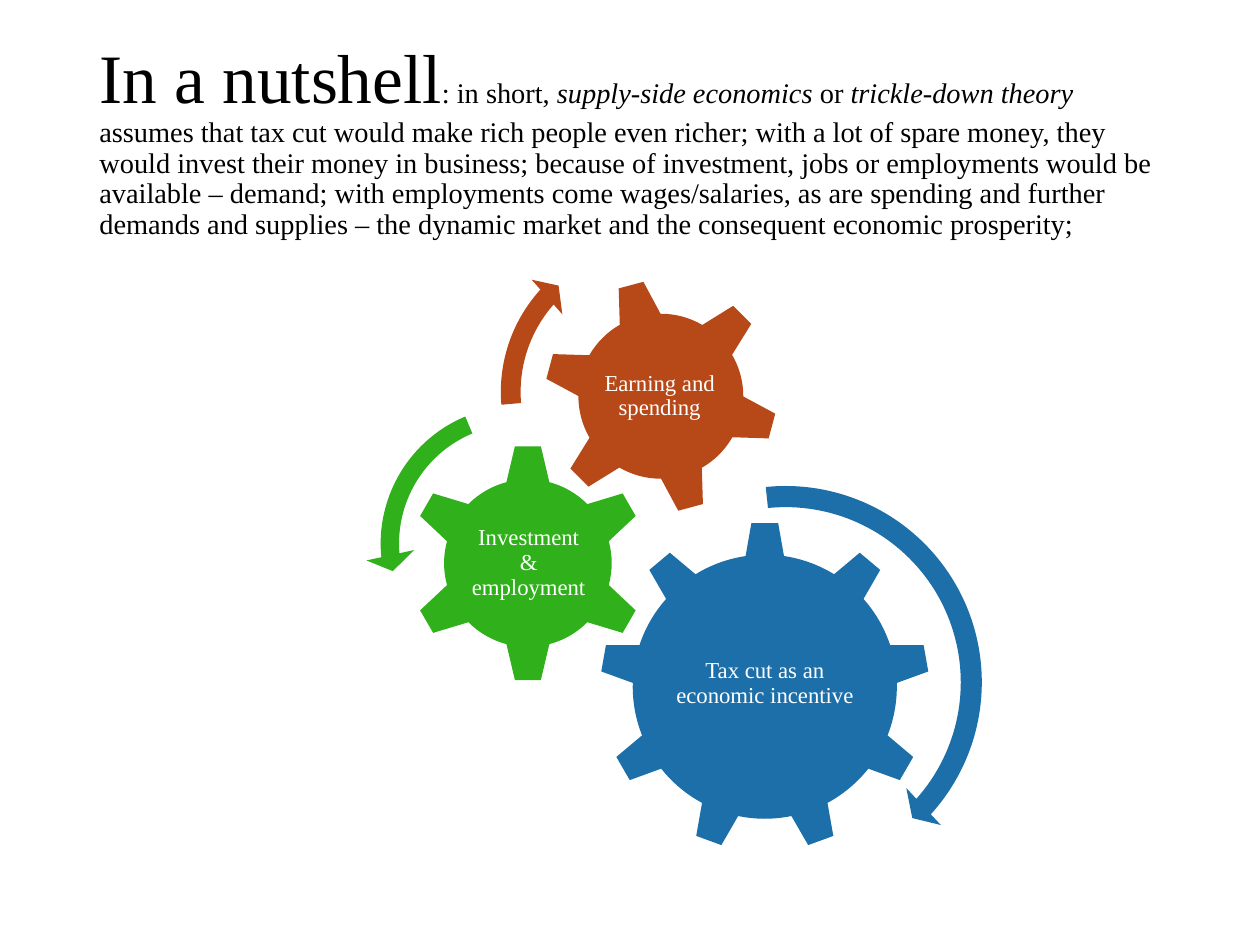
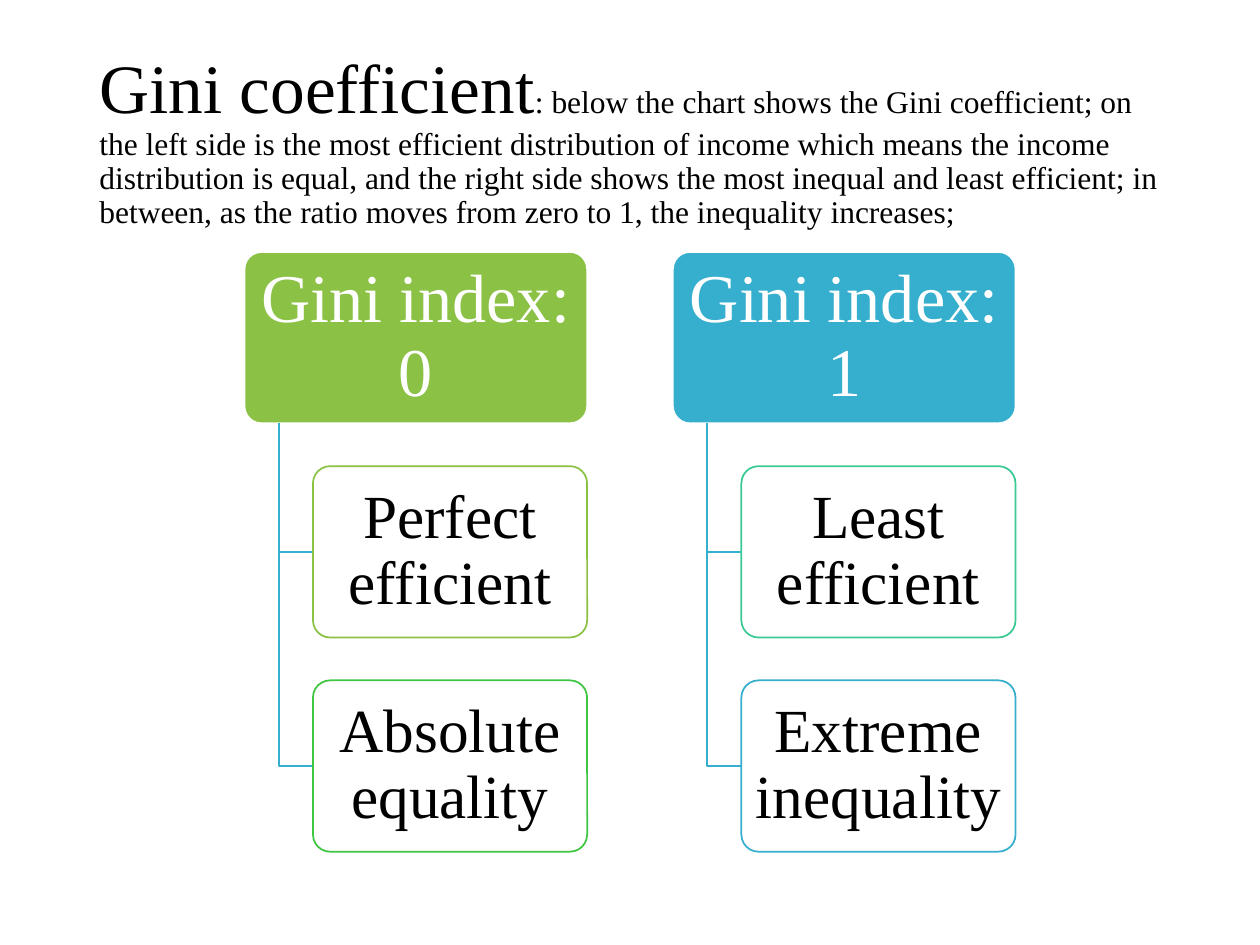
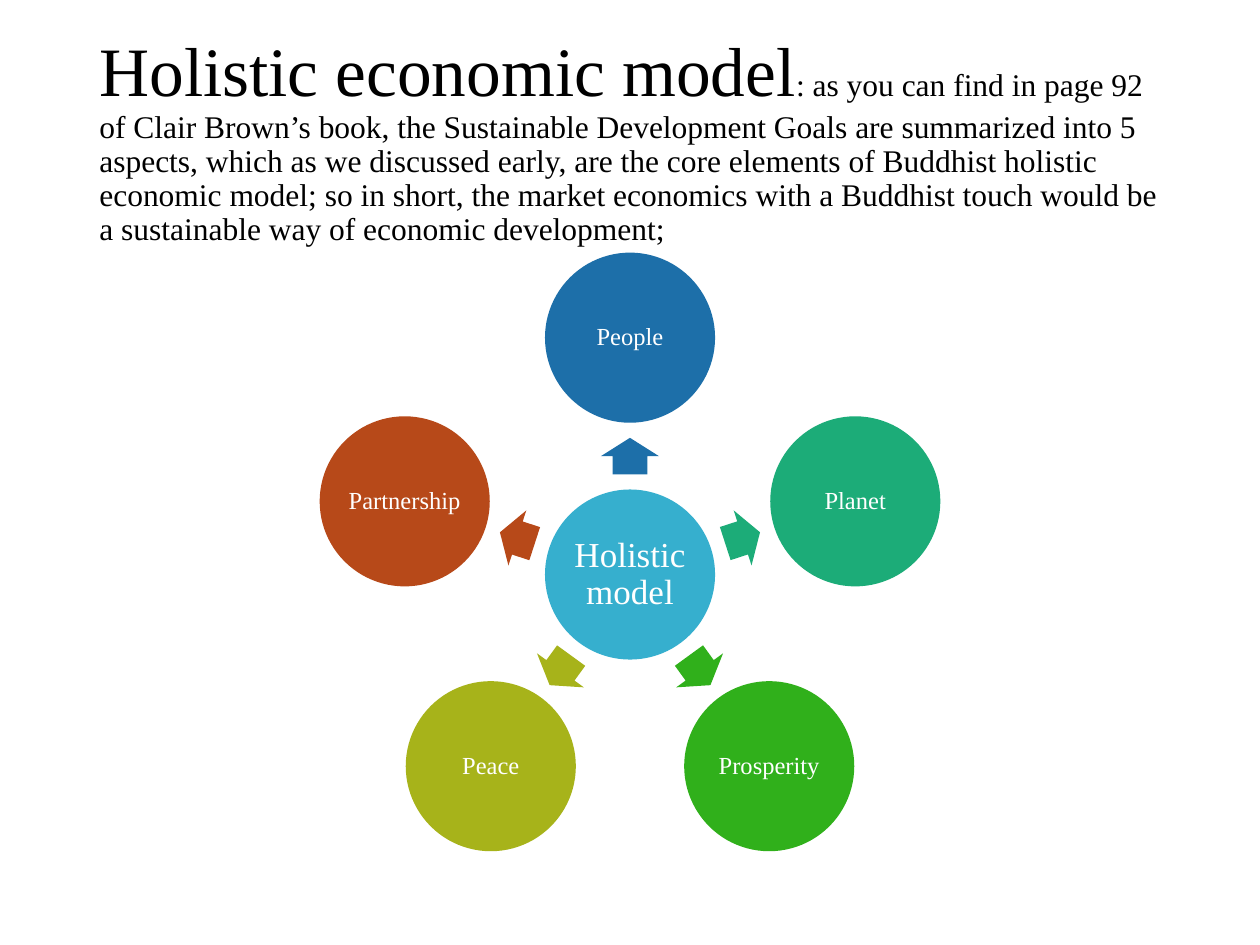
from math import cos, radians, sin

from lxml.etree import SubElement
from pptx import Presentation
from pptx.dml.color import RGBColor
from pptx.enum.shapes import MSO_SHAPE
from pptx.enum.text import MSO_ANCHOR, PP_ALIGN
from pptx.oxml.ns import qn
from pptx.util import Inches, Pt

FONT = "Times New Roman"
BLACK = RGBColor(0x00, 0x00, 0x00)
WHITE = RGBColor(0xFF, 0xFF, 0xFF)
BLUE = RGBColor(0x1D, 0x6F, 0xA9)
GREEN = RGBColor(0x30, 0xB0, 0x1B)
RUST = RGBColor(0xB7, 0x49, 0x19)
TEAL = RGBColor(0x1C, 0xAC, 0x78)
OLIVE = RGBColor(0xA7, 0xB3, 0x1A)
SKY = RGBColor(0x36, 0xAF, 0xCE)
LIME = RGBColor(0x8B, 0xC1, 0x45)
LEAF_GREEN = RGBColor(0x40, 0xC5, 0x43)
MINT = RGBColor(0x3B, 0xCA, 0x93)

HEADING_BOX = (0.69, 0.4, 8.62, 1.45)
HEADING_SIZE = 39.6

NUTSHELL = ("In a nutshell", 16.2, [
    (": in short, ", False),
    ("supply-side economics", True),
    (" or ", False),
    ("trickle-down theory", True),
    (" assumes that tax cut would make rich people even richer; with a lot of "
     "spare money, they would invest their money in business; because of "
     "investment, jobs or employments would be available – demand; with "
     "employments come wages/salaries, as are spending and further demands and "
     "supplies – the dynamic market and the consequent economic prosperity;", False),
])
GINI = ("Gini coefficient", 18, [
    (": below the chart shows the Gini coefficient; on the left side is the most "
     "efficient distribution of income which means the income distribution is "
     "equal, and the right side shows the most inequal and least efficient; in "
     "between, as the ratio moves from zero to 1, the inequality increases;", False),
])
HOLISTIC = ("Holistic economic model", 18, [
    (": as you can find in page 92 of Clair Brown’s book, the Sustainable "
     "Development Goals are summarized into 5 aspects, which as we discussed "
     "early, are the core elements of Buddhist holistic economic model; so in "
     "short, the market economics with a Buddhist touch would be a sustainable "
     "way of economic development;", False),
])

GEARS = [
    ("Tax cut as an economic incentive", BLUE, MSO_SHAPE.GEAR_9,
     (4.76, 4.14, 2.62), 0, (5.29, 4.75, 1.56, 1.35)),
    ("Investment & employment", GREEN, MSO_SHAPE.GEAR_6,
     (3.24, 3.52, 1.9), 0, (3.72, 4, 0.95, 0.94)),
    ("Earning and spending", RUST, MSO_SHAPE.GEAR_6,
     (4.31, 2.21, 1.87), 345, (4.71, 2.62, 1.05, 1.05)),
]
TURNS = [
    (BLUE, MSO_SHAPE.CIRCULAR_ARROW, (4.56, 3.74, 3.35),
     (0.05, 2.99, 25.2, 158.53, 0.06)),
    (GREEN, MSO_SHAPE.LEFT_CIRCULAR_ARROW, (2.9, 3.1, 2.43),
     (0.06, 4.3, 104.89, 148.38, 0.08)),
    (RUST, MSO_SHAPE.CIRCULAR_ARROW, (3.87, 1.8, 2.62),
     (0.06, 3.94, 133.14, 105.08, 0.07)),
]

INDEXES = [
    ("Gini index: 0", LIME, [("Perfect efficient", LIME), ("Absolute equality", LEAF_GREEN)]),
    ("Gini index: 1", SKY, [("Least efficient", MINT), ("Extreme inequality", SKY)]),
]
TREE_LEFT, TREE_TOP = 1.94, 2
HEAD_W, HEAD_H = 2.72, 1.36
PITCH = 1.25
INDENT = 0.2 * HEAD_W

HUB = "Holistic model"
ASPECTS = [("People", BLUE), ("Planet", TEAL), ("Prosperity", GREEN),
           ("Peace", OLIVE), ("Partnership", RUST)]
HUB_X, HUB_Y = 5, 4.56
ORBIT = 1.88
CIRCLE = 1.35
ARROW_W, ARROW_H = 0.29, 0.46


def add_runs(paragraph, runs):
    paragraph.line_spacing = 0.9
    for text, size, color, italic in runs:
        run = paragraph.add_run()
        run.text = text
        formats = {"name": FONT, "size": Pt(size), "italic": italic}
        for attribute, value in formats.items():
            setattr(run.font, attribute, value)
        run.font.color.rgb = color


def write_label(shape, text, size, color=WHITE, side=0.02, edge=0.02):
    frame = shape.text_frame
    formats = {"word_wrap": True, "vertical_anchor": MSO_ANCHOR.MIDDLE,
               "margin_left": Inches(side), "margin_right": Inches(side),
               "margin_top": Inches(edge), "margin_bottom": Inches(edge)}
    for attribute, value in formats.items():
        setattr(frame, attribute, value)
    paragraph = frame.paragraphs[0]
    paragraph.alignment = PP_ALIGN.CENTER
    add_runs(paragraph, [(text, size, color, False)])


def add_figure(slide, preset, box, fill, line=None, adjustments=(), rotation=0):
    figure = slide.shapes.add_shape(preset, *map(Inches, box))
    figure.shadow.inherit = False
    figure.rotation = rotation
    figure.fill.solid()
    figure.fill.fore_color.rgb = fill
    if line is None:
        figure.line.fill.background()
    else:
        figure.line.color.rgb = line
        figure.line.width = Pt(1)
    for position, value in enumerate(adjustments):
        figure.adjustments[position] = value
    return figure


def add_heading(slide, heading):
    title, size, body = heading
    frame = slide.shapes.add_textbox(*map(Inches, HEADING_BOX)).text_frame
    frame.word_wrap = True
    frame.vertical_anchor = MSO_ANCHOR.MIDDLE
    add_runs(frame.paragraphs[0], [(title, HEADING_SIZE, BLACK, False)]
             + [(text, size, BLACK, italic) for text, italic in body])


def draw_gears(slide):
    for label, color, preset, (left, top, side), rotation, label_box in GEARS:
        add_figure(slide, preset, (left, top, side, side), color, rotation=rotation)
        write_label(slide.shapes.add_textbox(*map(Inches, label_box)), label, 13)
    for color, preset, (left, top, side), adjustments in TURNS:
        add_figure(slide, preset, (left, top, side, side), color, adjustments=adjustments)


def add_branch(slide, x, top, bottom, end):
    builder = slide.shapes.build_freeform(Inches(x), Inches(top))
    builder.add_line_segments([(Inches(x), Inches(bottom)), (Inches(end), Inches(bottom))],
                              close=False)
    branch = builder.convert_to_shape()
    branch.shadow.inherit = False
    branch.fill.background()
    branch.line.color.rgb = SKY
    branch.line.width = Pt(1)


def draw_tree(slide):
    for column, (index, color, traits) in enumerate(INDEXES):
        left = TREE_LEFT + column * PITCH * HEAD_W
        head = add_figure(slide, MSO_SHAPE.ROUNDED_RECTANGLE,
                          (left, TREE_TOP, HEAD_W, HEAD_H), color, WHITE, (0.1,))
        write_label(head, index, 39, side=0.08, edge=0.05)
        for row, (trait, outline) in enumerate(traits, 1):
            top = TREE_TOP + row * PITCH * HEAD_H
            add_branch(slide, left + INDENT / 2, TREE_TOP + HEAD_H,
                       top + HEAD_H / 2, left + INDENT)
            leaf = add_figure(slide, MSO_SHAPE.ROUNDED_RECTANGLE,
                              (left + INDENT, top, HEAD_W - INDENT, HEAD_H),
                              WHITE, outline, (0.1,))
            leaf_color = leaf.fill._xPr.find(qn("a:solidFill"))[0]
            SubElement(leaf_color, qn("a:alpha"), val="90000")
            write_label(leaf, trait, 35, BLACK, side=0.07, edge=0.05)


def centred(x, y, width, height):
    return x - width / 2, y - height / 2, width, height


def draw_wheel(slide):
    hub = add_figure(slide, MSO_SHAPE.OVAL, centred(HUB_X, HUB_Y, CIRCLE, CIRCLE), SKY)
    write_label(hub, HUB, 20, side=0.03, edge=0.03)
    for position, (aspect, color) in enumerate(ASPECTS):
        angle = position * 360 / len(ASPECTS) - 90
        dx, dy = ORBIT * cos(radians(angle)), ORBIT * sin(radians(angle))
        add_figure(slide, MSO_SHAPE.RIGHT_ARROW,
                   centred(HUB_X + dx / 2, HUB_Y + dy / 2, ARROW_W, ARROW_H),
                   color, adjustments=(0.6, 0.5), rotation=angle % 360)
        circle = add_figure(slide, MSO_SHAPE.OVAL,
                            centred(HUB_X + dx, HUB_Y + dy, CIRCLE, CIRCLE), color)
        write_label(circle, aspect, 14)


def main():
    deck = Presentation()
    deck.slide_width, deck.slide_height = Inches(10), Inches(7.5)
    for heading, draw in [(NUTSHELL, draw_gears), (GINI, draw_tree), (HOLISTIC, draw_wheel)]:
        slide = deck.slides.add_slide(deck.slide_layouts[6])
        add_heading(slide, heading)
        draw(slide)
    deck.save("out.pptx")


if __name__ == "__main__":
    main()
